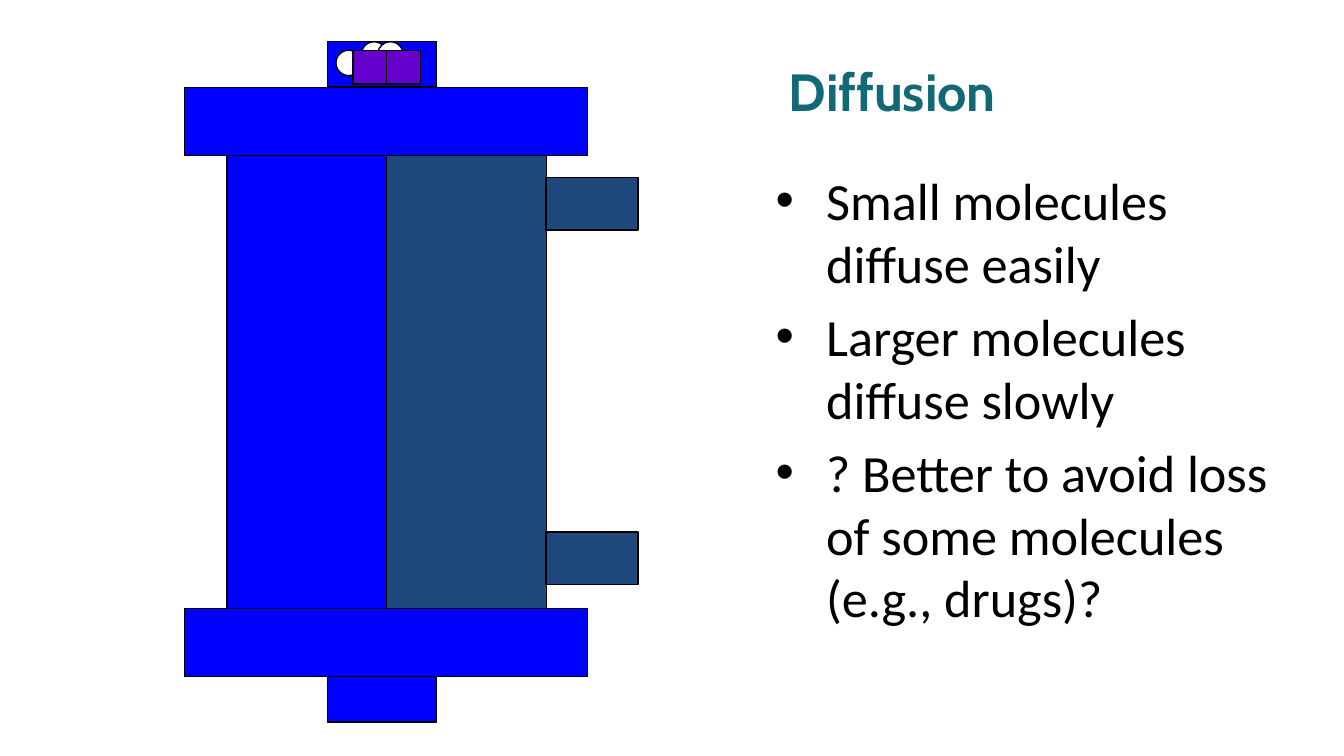
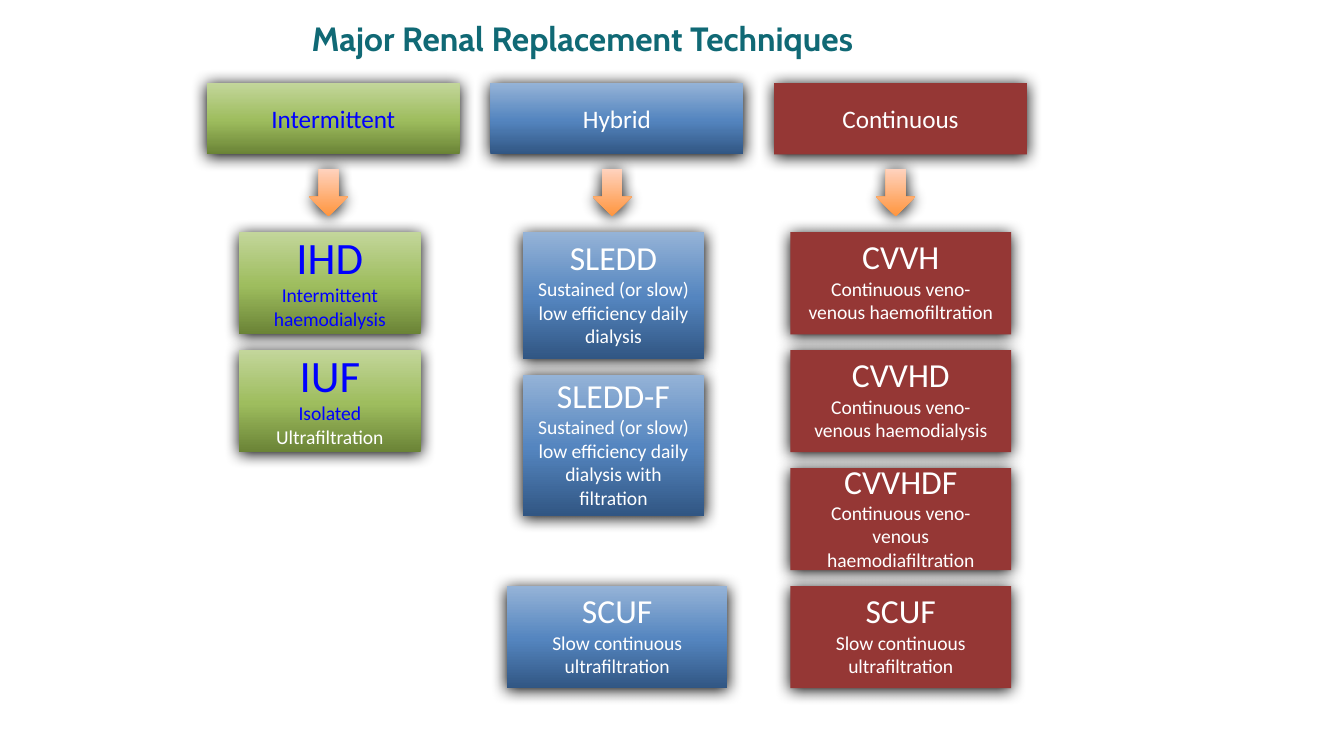
"""Build two slides on dialysis: diffusion and renal replacement techniques."""
import copy

import lxml.etree
import pptx
import pptx.dml.color
import pptx.enum.shapes
import pptx.enum.text
import pptx.oxml.ns
import pptx.util

Cm = pptx.util.Cm
Pt = pptx.util.Pt
RGBColor = pptx.dml.color.RGBColor
SHAPE = pptx.enum.shapes.MSO_SHAPE
ALIGN = pptx.enum.text.PP_ALIGN
ANCHOR = pptx.enum.text.MSO_ANCHOR
qn = pptx.oxml.ns.qn

BLACK = RGBColor(0x00, 0x00, 0x00)
WHITE = RGBColor(0xFF, 0xFF, 0xFF)
TEAL = RGBColor(0x10, 0x69, 0x75)
BLUE = RGBColor(0x00, 0x00, 0xFF)
NAVY = RGBColor(0x1F, 0x49, 0x7D)
PURPLE = RGBColor(0x66, 0x00, 0xCC)
DARK_RED = RGBColor(0x95, 0x37, 0x35)
GREENS = ((0, RGBColor(0x6A, 0x83, 0x36)), (0.48, RGBColor(0x9E, 0xBD, 0x5E)),
          (1, RGBColor(0xC3, 0xD6, 0x9B)))
BLUES = ((0, RGBColor(0x31, 0x56, 0x83)), (0.48, RGBColor(0x54, 0x85, 0xBF)),
         (1, RGBColor(0x95, 0xB3, 0xD7)))
ORANGES = ((0, RGBColor(0xFF, 0x95, 0x3E)), (1, RGBColor(0xFF, 0xD2, 0xBD)))

HEADING_FONT = "Cabin"
BODY_FONT = "Calibri"


class Deck:
    def __init__(self):
        self.prs = pptx.Presentation()
        self.prs.slide_width = Cm(25.4)
        self.prs.slide_height = Cm(14.29)
        self.s = None

    def slide(self, layout):
        self.s = self.prs.slides.add_slide(self.prs.slide_layouts[layout])

    def style(self, runs, size, color, font=BODY_FONT, bold=False):
        for r in runs:
            r.font.name = font
            r.font.size = Pt(size)
            r.font.bold = bold
            r.font.color.rgb = color

    def place(self, sp, box, text):
        sp.left, sp.top, sp.width, sp.height = (Cm(v) for v in box)
        tf = sp.text_frame
        tf.text = text
        tf.word_wrap = True
        tf.auto_size = pptx.enum.text.MSO_AUTO_SIZE.NONE
        tf.vertical_anchor = ANCHOR.TOP
        tf.margin_left = tf.margin_top = tf.margin_bottom = 0
        tf.paragraphs[0].space_before = Pt(0)
        return tf

    def title(self, box, text, size):
        p = self.place(self.s.shapes.title, box, text).paragraphs[0]
        p.alignment = ALIGN.LEFT
        self.style(p.runs, size, TEAL, HEADING_FONT, True)

    def bullets(self, box, lines, size):
        tf = self.place(self.s.placeholders[1], box, "\n".join(lines))
        for p in tf.paragraphs:
            self.style(p.runs, size, BLACK)

    def shape(self, kind, box, shapes=None):
        shapes = self.s.shapes if shapes is None else shapes
        sp = shapes.add_shape(kind, *(Cm(v) for v in box))
        sp.shadow.inherit = False
        return sp

    def outlined(self, kind, box, color, shapes=None):
        sp = self.shape(kind, box, shapes)
        sp.fill.solid()
        sp.fill.fore_color.rgb = color
        sp.line.color.rgb = BLACK
        sp.line.width = Pt(0.75)

    def gradient(self, sp, stops):
        sp.fill.gradient()
        sp.fill.gradient_angle = 90
        gs_list = sp._element.spPr.find(qn("a:gradFill")).find(qn("a:gsLst"))
        for _ in stops[2:]:
            gs_list.append(copy.deepcopy(gs_list[0]))
        for stop, (position, color) in zip(sp.fill.gradient_stops, stops):
            stop.position = position
            stop.color.rgb = color

    def raised(self, kind, box, paint):
        sp = self.shape(kind, box)
        sp.line.fill.background()
        if isinstance(paint, RGBColor):
            sp.fill.solid()
            sp.fill.fore_color.rgb = paint
        else:
            self.gradient(sp, paint)
        effects = sp._element.spPr.find(qn("a:effectLst"))
        shadow = lxml.etree.SubElement(
            effects, qn("a:outerShdw"), blurRad=str(Pt(8.5)), dist=str(Pt(1)),
            dir="5400000", algn="ctr", rotWithShape="0")
        lxml.etree.SubElement(shadow, qn("a:srgbClr"), val=str(BLACK))
        return sp

    def label(self, box, paint, lines, sizes, color):
        tf = self.raised(SHAPE.RECTANGLE, box, paint).text_frame
        tf.text = "\n".join(lines)
        tf.word_wrap = True
        tf.vertical_anchor = ANCHOR.MIDDLE
        for p, size in zip(tf.paragraphs, sizes):
            p.alignment = ALIGN.CENTER
            self.style(p.runs, size, color)
        return tf

    def card(self, box, paint, lines, size, color, white_tail=""):
        tf = self.label(box, paint, lines, (size, 10.5), color)
        tf.margin_top = 0
        if white_tail:
            r = tf.paragraphs[1].add_run()
            r.text = white_tail
            self.style([r], 10.5, WHITE)


def diffusion(deck):
    deck.slide(1)
    deck.title((14.91, 1.12, 9.73, 1.24), "Diffusion", 28)
    deck.bullets((14.66, 3.18, 9.73, 8.36), (
        "Small molecules diffuse easily",
        "Larger molecules diffuse slowly",
        "? Better to avoid loss of some molecules (e.g., drugs)?"), 28)

    dialyser = deck.s.shapes.add_group_shape().shapes
    for left, color in ((4.29, BLUE), (7.31, NAVY)):
        deck.outlined(SHAPE.RECTANGLE, (left, 2.93, 3.02, 8.57), color, dialyser)
    for left, tops, width, height, color in (
            (10.32, (10.06, 3.36), 1.74, 0.99, NAVY),
            (3.49, (11.5, 1.65), 7.62, 1.29, BLUE),
            (6.19, (0.79, 12.79), 2.06, 0.86, BLUE)):
        for top in tops:
            deck.outlined(SHAPE.RECTANGLE, (left, top, width, height), color, dialyser)

    for left, top in ((6.35, 0.95), (6.67, 0.95), (6.99, 0.95),
                      (6.83, 0.79), (6.99, 1.11), (7.14, 0.79)):
        deck.outlined(SHAPE.OVAL, (left, top, 0.48, 0.48), WHITE)
    for left in (7.31, 6.67):
        deck.outlined(SHAPE.RECTANGLE, (left, 0.95, 0.64, 0.64), PURPLE)


def techniques(deck):
    first_left, column_pitch = 3.91, 5.36
    first_top, card_height, gap = 4.39, 1.93, 0.3
    narrow, wide = (0.61, 3.43), (0.31, 4.17)
    scuf = ("SCUF", "Slow continuous ultrafiltration")
    scuf_top = first_top + 3 * (card_height + gap)

    deck.slide(5)
    deck.title((5.89, 0.33, 15.98, 0.71), "Major Renal Replacement Techniques", 18)
    columns = (
        ("Intermittent", GREENS, BLUE, 24, narrow, (
            (card_height, "IHD", "Intermittent haemodialysis", ""),
            (card_height, "IUF", "Isolated", " Ultrafiltration"))),
        ("Hybrid", BLUES, WHITE, 18, narrow, (
            (2.39, "SLEDD", "Sustained (or slow) low efficiency daily dialysis", ""),
            (2.67, "SLEDD-F",
             "Sustained (or slow) low efficiency daily dialysis with filtration", ""))),
        ("Continuous", DARK_RED, WHITE, 18, wide, (
            (card_height, "CVVH", "Continuous veno-venous haemofiltration", ""),
            (card_height, "CVVHD", "Continuous veno-venous haemodialysis", ""),
            (card_height, "CVVHDF", "Continuous veno-venous haemodiafiltration", ""))))
    for i, (name, paint, color, size, (indent, width), cards) in enumerate(columns):
        left = first_left + i * column_pitch
        deck.label((left, 1.57, 4.78, 1.35), paint, (name,), (13.5,), color)
        deck.raised(SHAPE.DOWN_ARROW, (left + 1.93, 3.2, 0.74, 0.89), ORANGES)
        top = first_top
        for height, short, detail, tail in cards:
            deck.card((left + indent, top, width, height), paint,
                      (short, detail), size, color, tail)
            top += height + gap
        if i > 0:
            deck.card((left + wide[0], scuf_top, wide[1], card_height), paint,
                      scuf, size, color)


def main():
    deck = Deck()
    diffusion(deck)
    techniques(deck)
    deck.prs.save("out.pptx")


if __name__ == "__main__":
    main()
